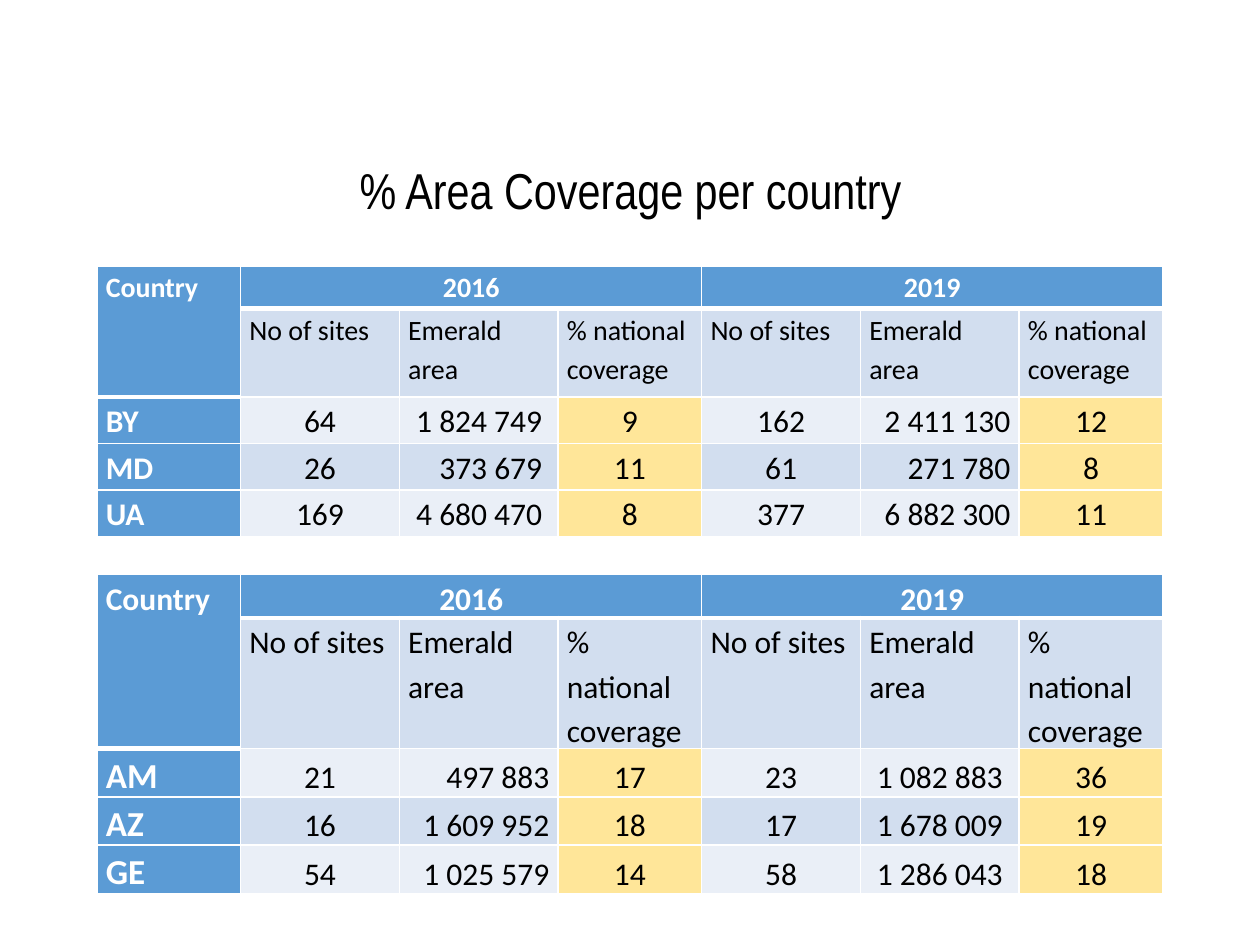
from lxml import etree
from pptx import Presentation
from pptx import util as u
from pptx.dml.color import RGBColor
from pptx.enum import text
from pptx.oxml.ns import qn

HUES = {"head": "5B9BD5", "odd": "EAEFF7", "even": "D2DEEF", "mark": "FFE699",
        "ink": "000000", "white": "FFFFFF"}
LEFT, MID, RIGHT = text.PP_ALIGN.LEFT, text.PP_ALIGN.CENTER, text.PP_ALIGN.RIGHT
TOP, LOW = text.MSO_ANCHOR.TOP, text.MSO_ANCHOR.BOTTOM


def write(para, words, face, size, hue, bold=False):
    run = para.add_run()
    run.text = words
    run.font.name = face
    run.font.size = u.Pt(size)
    run.font.bold = bold
    run.font.color.rgb = RGBColor.from_string(HUES[hue])


def edge(cell, heavy):
    props = cell._tc.get_or_add_tcPr()
    for spot, side in enumerate("LRTB"):
        width = u.Pt(3 if side in heavy else 1)
        line = etree.Element(qn(f"a:ln{side}"), w=str(width))
        fill = etree.SubElement(line, qn("a:solidFill"))
        etree.SubElement(fill, qn("a:srgbClr"), val=HUES["white"])
        props.insert(spot, line)


deck = Presentation()
deck.slide_width, deck.slide_height = u.Inches(10), u.Inches(7.5)
slide = deck.slides.add_slide(deck.slide_layouts[6])

title = slide.shapes.add_textbox(u.Inches(2.7), u.Inches(1.26), u.Inches(4.61), u.Inches(0.55)).text_frame
title.word_wrap = True
title.vertical_anchor = text.MSO_ANCHOR.MIDDLE
title.margin_left = title.margin_right = title.margin_top = title.margin_bottom = 0
para = title.paragraphs[0]
para.alignment = MID
para.line_spacing = 0.9
write(para, "% Area Coverage per country", "Arial Narrow", 28.8, "ink")

years = ["Country", "2016", "", "", "2019", "", ""]
labels = [""] + ["No of sites", "Emerald area", "% national coverage"] * 2
widths = [1.14] + [1.26, 1.26, 1.14] * 2
east = [
    ["BY", "64", "1 824 749 ", "9", "162", "2 411 130", "12"],
    ["MD", "26", "373 679 ", "11", "61", "271 780", "8"],
    ["UA", "169", "4 680 470 ", "8", "377", "6 882 300", "11"],
]
south = [
    ["AM", "21", "497 883", "17", "23", "1 082 883", "36"],
    ["AZ", "16", "1 609 952", "18", "17", "1 678 009", "19"],
    ["GE", "54", "1 025 579", "14", "58", "1 286 043", "18"],
]
blocks = [
    (2.11, 2.15, 0.37, 16, 18, 1.15, TOP, RIGHT, east),
    (4.56, 2.03, 0.33, 18, 20, None, LOW, MID, south),
]

for top, tall, step, small, large, space, anchor, last, data in blocks:
    rows = [years, labels] + data
    grid = slide.shapes.add_table(len(rows), len(widths), u.Inches(0.77), u.Inches(top),
                                  u.Inches(sum(widths)), u.Inches(tall)).table
    for col, width in zip(grid.columns, widths):
        col.width = u.Inches(width)
    for row, height in zip(grid.rows, [0.34, 0.7] + [step] * len(data)):
        row.height = u.Inches(height)
    aligns = [LEFT, MID, RIGHT, MID, MID, last, MID]

    for r, row in enumerate(rows):
        for c, words in enumerate(row):
            cell = grid.cell(r, c)
            head = r == 0 or c == 0
            value = r > 1 and c > 0
            if head:
                hue = "head"
            elif value and c % 3 == 0:
                hue = "mark"
            else:
                hue = "even" if r % 2 else "odd"
            cell.fill.solid()
            cell.fill.fore_color.rgb = RGBColor.from_string(HUES[hue])
            heavy = "B" if r == 0 or (r == 1 and c == 0) else ""
            heavy += "T" if r == 1 or (r == 2 and c == 0) else ""
            edge(cell, heavy)
            cell.margin_left = cell.margin_right = u.Inches(0.07)
            cell.margin_top = cell.margin_bottom = 0
            cell.vertical_anchor = anchor if value else TOP
            if not words:
                continue
            para = cell.text_frame.paragraphs[0]
            para.line_spacing = space if value else 1.15
            para.alignment = aligns[c] if value else MID if r == 0 and c else LEFT
            size = small if r < 2 else 18 if c else large
            write(para, words, "Calibri", size, "white" if head else "ink", head)

    grid.cell(0, 0).merge(grid.cell(1, 0))
    for c in (1, 4):
        grid.cell(0, c).merge(grid.cell(0, c + 2))

deck.save("out.pptx")
